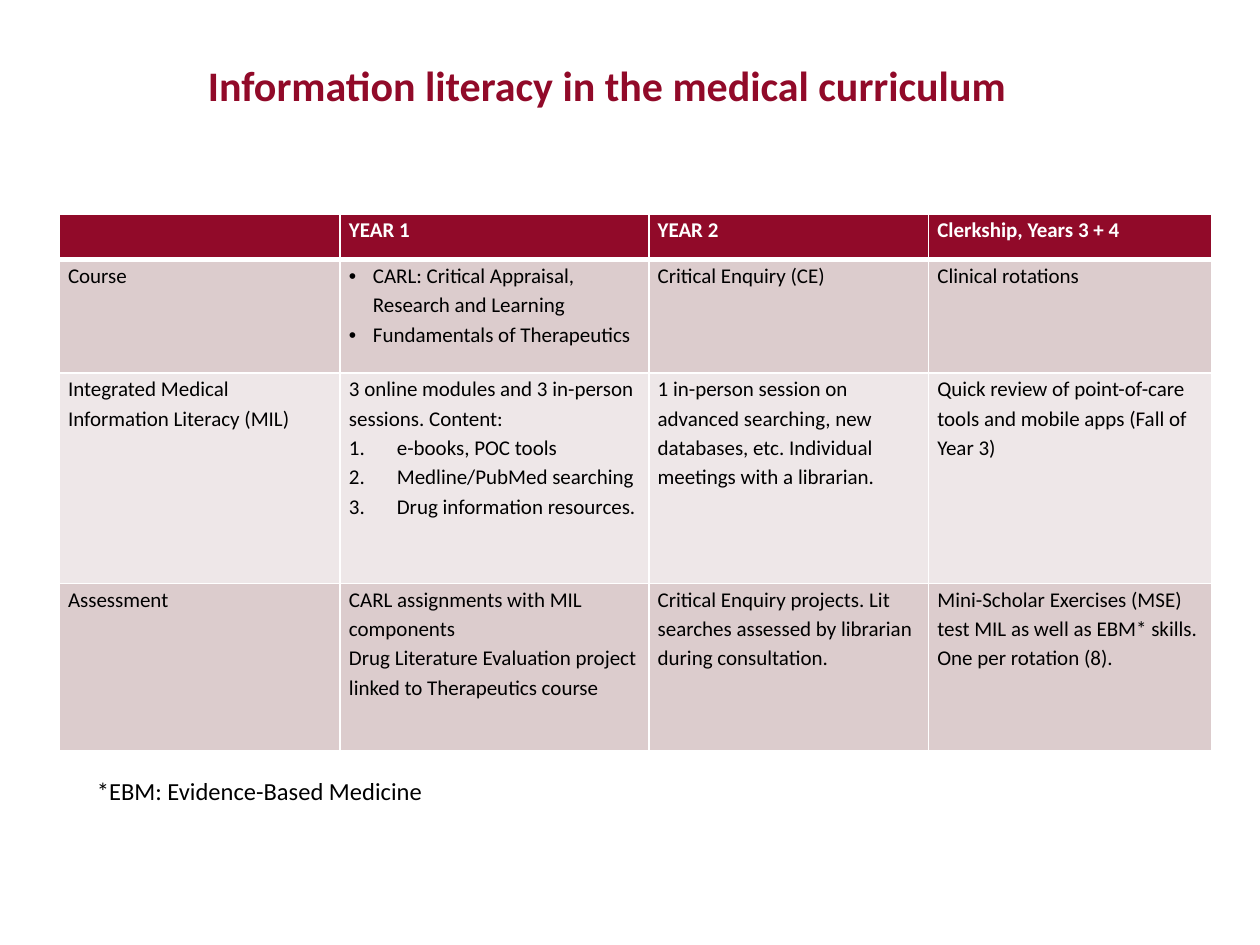
from dataclasses import dataclass

from lxml import etree
from pptx import Presentation
from pptx import util as u
from pptx.dml.color import RGBColor
from pptx.enum import text
from pptx.oxml import ns


@dataclass(frozen=True)
class Theme:
    font: str = "Calibri"
    accent: str = "910A29"
    ink: str = "000000"
    white: str = "FFFFFF"
    bands: tuple = ("DCCCCD", "EEE7E8")
    title_size: int = 24
    table_size: int = 12
    note_size: int = 14
    thin: int = 1
    thick: int = 3


BULLET = ("buChar", {"char": "•"}, 0.19)
NUMBER = ("buAutoNum", {"type": "arabicPeriod"}, 0.38)

COLUMN_WIDTHS = (2.23, 2.45, 2.22, 2.25)
ROW_HEIGHTS = (0.36, 0.9, 1.67, 1.33)
CURRICULUM = [
    ["", "YEAR 1", "YEAR 2", "Clerkship, Years 3 + 4"],
    [
        "Course",
        [
            ("CARL: Critical Appraisal, Research and Learning", BULLET),
            ("Fundamentals of Therapeutics", BULLET),
        ],
        "Critical Enquiry (CE)",
        "Clinical rotations",
    ],
    [
        "Integrated Medical Information Literacy (MIL)",
        [
            ("3 online modules and 3 in-person sessions. Content:", None),
            ("e-books, POC tools", NUMBER),
            ("Medline/PubMed searching", NUMBER),
            ("Drug information resources.", NUMBER),
        ],
        "1 in-person session on advanced searching, new databases, etc. "
        "Individual meetings with a librarian.",
        "Quick review of point-of-care tools and mobile apps (Fall of Year 3)",
    ],
    [
        "Assessment",
        [
            ("CARL assignments with MIL components", None),
            ("Drug Literature Evaluation project linked to Therapeutics course", None),
        ],
        "Critical Enquiry projects. Lit searches assessed by librarian "
        "during consultation.",
        "Mini-Scholar Exercises (MSE) test MIL as well as EBM* skills. "
        "One per rotation (8).",
    ],
]


class SlideBuilder:
    def __init__(self, slide, theme):
        self.slide = slide
        self.theme = theme

    def format_runs(self, paragraph, size, color, bold=False):
        for run in paragraph.runs:
            run.font.name = self.theme.font
            run.font.size = u.Pt(size)
            run.font.bold = bold
            run.font.color.rgb = RGBColor.from_string(color)

    def text_box(self, content, box, size, color, bold=False):
        shape = self.slide.shapes.add_textbox(*map(u.Inches, box))
        frame = shape.text_frame
        frame.word_wrap = True
        frame.text = content
        self.format_runs(frame.paragraphs[0], size, color, bold)
        return frame

    def title(self, content, box):
        theme = self.theme
        frame = self.text_box(content, box, theme.title_size, theme.accent, True)
        frame.vertical_anchor = text.MSO_ANCHOR.MIDDLE
        frame.margin_left = frame.margin_bottom = 0
        frame.paragraphs[0].line_spacing = u.Pt(theme.title_size)

    def list_marker(self, paragraph, marker):
        tag, attributes, indent = marker
        properties = paragraph._p.get_or_add_pPr()
        properties.set("marL", str(u.Inches(indent)))
        properties.set("indent", str(-u.Inches(indent)))
        font = etree.SubElement(properties, ns.qn("a:buFont"))
        font.set("typeface", "Arial" if tag == "buChar" else "+mj-lt")
        etree.SubElement(properties, ns.qn(f"a:{tag}"), attributes)

    def borders(self, cell, top, bottom):
        thin = self.theme.thin
        properties = cell._tc.get_or_add_tcPr()
        for side, width in (("L", thin), ("R", thin), ("T", top), ("B", bottom)):
            line = etree.SubElement(
                properties, ns.qn(f"a:ln{side}"), {"w": str(u.Pt(width))}
            )
            fill = etree.SubElement(line, ns.qn("a:solidFill"))
            etree.SubElement(fill, ns.qn("a:srgbClr"), {"val": self.theme.white})

    def cell(self, cell, content, row):
        theme = self.theme
        header = row == 0
        self.borders(
            cell,
            theme.thick if row == 1 else theme.thin,
            theme.thick if header else theme.thin,
        )
        cell.fill.solid()
        fill = theme.accent if header else theme.bands[(row - 1) % 2]
        cell.fill.fore_color.rgb = RGBColor.from_string(fill)
        cell.margin_left = cell.margin_right = u.Inches(0.07)
        cell.margin_top = cell.margin_bottom = 0
        items = [(content, None)] if isinstance(content, str) else content
        cell.text_frame.text = "\n".join(words for words, _ in items)
        for paragraph, (_, marker) in zip(cell.text_frame.paragraphs, items):
            paragraph.line_spacing = 1.15
            if marker:
                self.list_marker(paragraph, marker)
            color = theme.white if header else theme.ink
            self.format_runs(paragraph, theme.table_size, color, header)

    def table(self, rows, left, top, widths, heights):
        box = (left, top, sum(widths), sum(heights))
        table = self.slide.shapes.add_table(
            len(rows), len(widths), *map(u.Inches, box)
        ).table
        table.first_row = table.horz_banding = False
        for column, width in zip(table.columns, widths):
            column.width = u.Inches(width)
        for row, height in zip(table.rows, heights):
            row.height = u.Inches(height)
        for row_index, row in enumerate(rows):
            for column_index, content in enumerate(row):
                self.cell(table.cell(row_index, column_index), content, row_index)


def main():
    presentation = Presentation()
    presentation.slide_width = u.Inches(10)
    presentation.slide_height = u.Inches(7.5)
    slide = presentation.slides.add_slide(presentation.slide_layouts[6])
    theme = Theme()
    builder = SlideBuilder(slide, theme)
    builder.title(
        "Information literacy in the medical curriculum", (1.65, 0.17, 6.7, 1.03)
    )
    builder.table(CURRICULUM, 0.47, 1.7, COLUMN_WIDTHS, ROW_HEIGHTS)
    builder.text_box(
        "*EBM: Evidence-Based Medicine",
        (0.67, 6.11, 8.58, 0.34),
        theme.note_size,
        theme.ink,
    )
    presentation.save("out.pptx")


if __name__ == "__main__":
    main()
